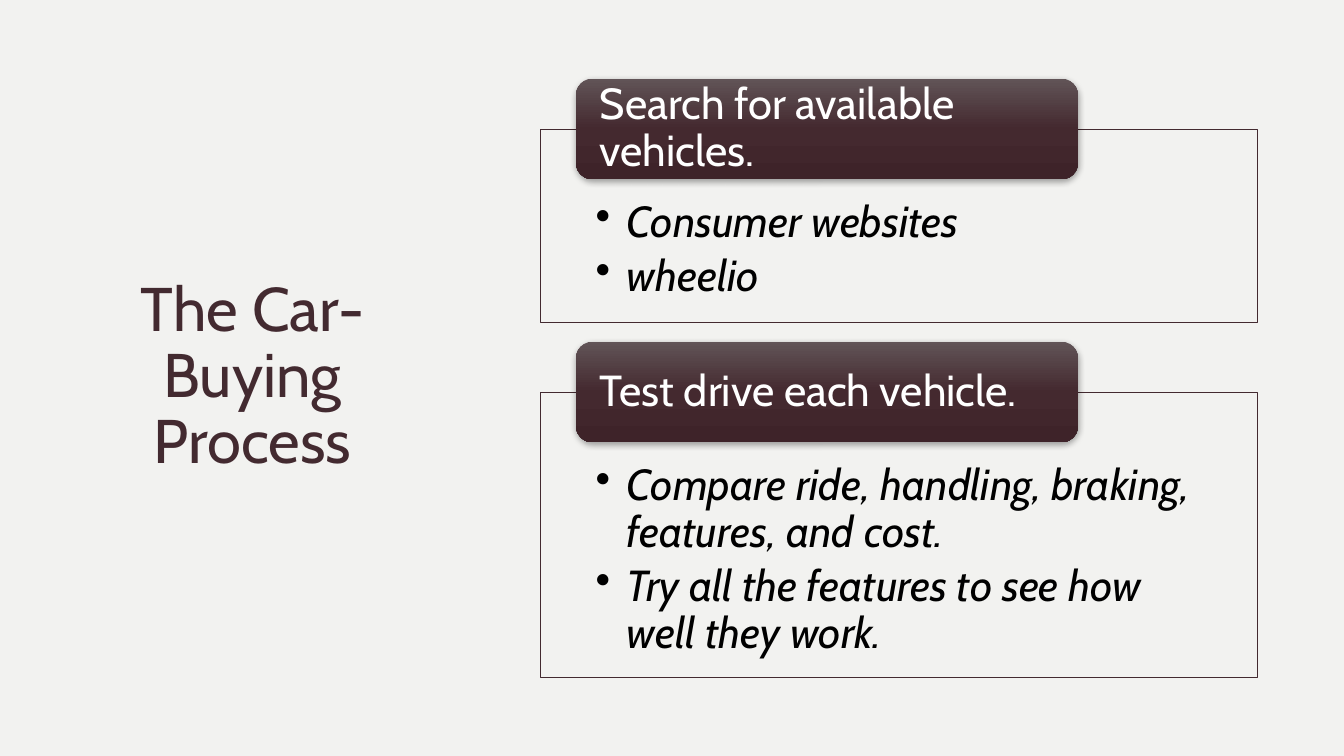
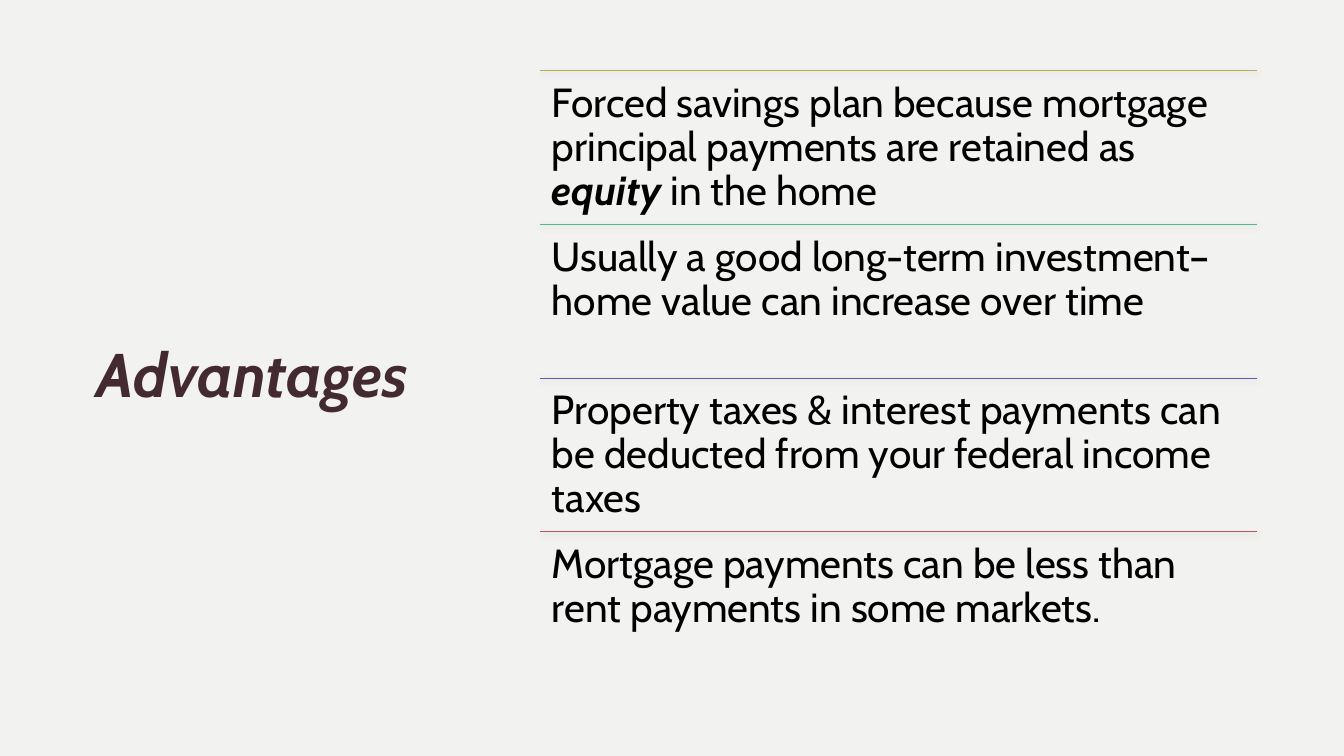
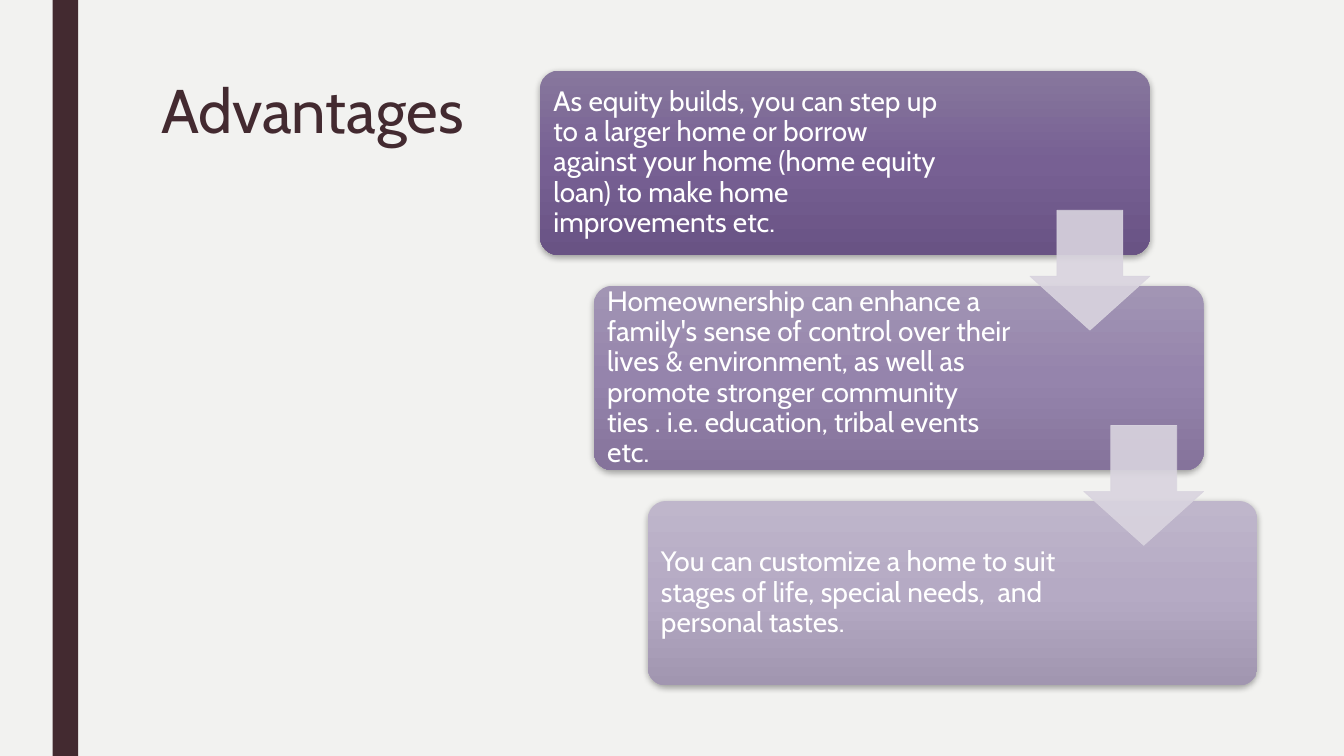
from dataclasses import dataclass

from lxml import etree
from pptx import Presentation
from pptx.dml.color import RGBColor
from pptx.enum import shapes, text
from pptx.oxml.ns import qn
from pptx.util import Cm, Pt


@dataclass(frozen=True)
class Theme:
    font: str = "Cabin"
    paper: str = "F2F2F0"
    plum: str = "432A30"
    black: str = "000000"
    white: str = "FFFFFF"
    arrow: str = "D9D4DF"
    header_gradient: tuple = ("615457", "44292F", "3E2329")
    card_gradients: tuple = (
        ("87779D", "776093", "695384"),
        ("A295B4", "9584AC", "85739B"),
        ("BFB6CB", "B5AAC4", "A196B0"),
    )
    rules: tuple = ("BDAB56", "56B98A", "6B56B4", "B0565D")
    title_size: int = 44
    process_size: int = 31
    row_size: int = 29
    card_size: int = 20


theme = Theme()
LEFT, ANCHOR = text.PP_ALIGN.LEFT, text.MSO_ANCHOR


def format_text(shape, size, colour, margins, anchor, align=LEFT, spacing=0.9):
    """Format text already set on a shape; margins run left, top, right, bottom in cm."""
    frame = shape.text_frame
    frame.word_wrap = True
    frame.vertical_anchor = anchor
    frame.margin_left, frame.margin_top, frame.margin_right, frame.margin_bottom = map(Cm, margins)
    for paragraph in frame.paragraphs:
        paragraph.alignment = align
        paragraph.line_spacing = spacing
        for run in paragraph.runs:
            run.font.name = theme.font
            run.font.size = Pt(size)
            run.font.color.rgb = RGBColor.from_string(colour)


def add_title(slide, title, left, top, width, height, anchor, align):
    box = slide.shapes.add_textbox(Cm(left), Cm(top), Cm(width), Cm(height))
    box.text_frame.text = title
    format_text(box, theme.title_size, theme.plum, (0.25, 0.13, 0.25, 0.13), anchor, align, 0.89)
    return box


presentation = Presentation()
presentation.slide_width, presentation.slide_height = Cm(33.87), Cm(19.05)
background = presentation.slide_master.background.fill
background.solid()
background.fore_color.rgb = RGBColor.from_string(theme.paper)
process_slide, benefits_slide, steps_slide = [
    presentation.slides.add_slide(presentation.slide_layouts[6]) for _ in range(3)
]

content_left, content_top, content_width, content_height = 13.61, 1.78, 18.08, 15.49
side_title = (1.78, 1.78, 9.17, 15.49, ANCHOR.MIDDLE, text.PP_ALIGN.CENTER)
gradient_shapes = []
shadowed_shapes = []

# Slide 1: panels with overlapping headers
add_title(process_slide, "The Car-Buying Process", *side_title)
panels = [
    ("Search for available vehicles.", ["Consumer websites", "wheelio"], 4.88),
    ("Test drive each vehicle.",
     ["Compare ride, handling, braking, features, and cost.",
      "Try all the features to see how well they work."], 7.19),
]
header_height, panel_gap, bullet_indent = 2.54, 1.75, 0.79
panel_top = 3.25
for heading, bullets, panel_height in panels:
    panel = process_slide.shapes.add_shape(
        shapes.MSO_SHAPE.RECTANGLE,
        Cm(content_left), Cm(panel_top), Cm(content_width), Cm(panel_height))
    panel.shadow.inherit = False
    panel.fill.solid()
    panel.fill.fore_color.rgb = RGBColor.from_string(theme.paper)
    panel.line.color.rgb = RGBColor.from_string(theme.plum)
    panel.line.width = Pt(0.5)
    panel.text_frame.text = "\n".join(bullets)
    format_text(panel, theme.process_size, theme.black, (1.4, 1.8, 1.4, 0.6), ANCHOR.TOP)
    for paragraph in panel.text_frame.paragraphs:
        paragraph.space_after = Pt(5)
        paragraph.font.italic = True
        for run in paragraph.runs:
            run.font.italic = True
        properties = paragraph._p.get_or_add_pPr()
        properties.set("marL", str(Cm(bullet_indent)))
        properties.set("indent", str(-Cm(bullet_indent)))
        bullet = etree.Element(qn("a:buChar"), char="•")
        properties.find(qn("a:spcAft")).addnext(bullet)

    header = process_slide.shapes.add_shape(
        shapes.MSO_SHAPE.ROUNDED_RECTANGLE,
        Cm(content_left + content_width * 0.05), Cm(panel_top - header_height / 2),
        Cm(content_width * 0.7), Cm(header_height))
    header.text_frame.text = heading
    format_text(header, theme.process_size, theme.white, (0.48, 0, 0.48, 0), ANCHOR.MIDDLE)
    gradient_shapes.append((header, theme.header_gradient))
    panel_top += panel_height + panel_gap

# Slide 2: ruled rows
title_box = add_title(benefits_slide, "Advantages", *side_title)
title_font = title_box.text_frame.paragraphs[0].runs[0].font
title_font.bold = title_font.italic = True
rows = [
    ("Forced savings plan because mortgage principal payments are retained as ",
     "equity", " in the home"),
    ("Usually a good long-term investment– home value can increase over time",),
    ("Property taxes & interest payments can be deducted from your federal income taxes",),
    ("Mortgage payments can be less than rent payments in some markets.",),
]
row_height = content_height / len(rows)
for index, (row, colour) in enumerate(zip(rows, theme.rules)):
    row_top = content_top + index * row_height
    rule = benefits_slide.shapes.add_connector(
        shapes.MSO_CONNECTOR.STRAIGHT,
        Cm(content_left), Cm(row_top), Cm(content_left + content_width), Cm(row_top))
    rule.line.color.rgb = RGBColor.from_string(colour)
    rule.line.width = Pt(0.5)
    shadowed_shapes.append(rule)
    box = benefits_slide.shapes.add_textbox(
        Cm(content_left), Cm(row_top), Cm(content_width), Cm(row_height))
    paragraph = box.text_frame.paragraphs[0]
    for part in row:
        run = paragraph.add_run()
        run.text = part
        run.font.bold = run.font.italic = part == "equity"
    format_text(box, theme.row_size, theme.black, (0.3, 0.3, 0.3, 0.3), ANCHOR.TOP)

# Slide 3: staggered cards joined by arrows
band = steps_slide.shapes.add_shape(
    shapes.MSO_SHAPE.RECTANGLE, Cm(1.33), 0, Cm(0.64), presentation.slide_height)
band.shadow.inherit = False
band.fill.solid()
band.fill.fore_color.rgb = RGBColor.from_string(theme.plum)
band.line.fill.background()
cards = [
    ("As equity builds, you can step up to a larger home or borrow against your home "
     "(home equity loan) to make home improvements etc.", 4.95),
    ("Homeownership can enhance a family's sense of control over their lives & environment, "
     "as well as promote stronger community ties . i.e. education, tribal events etc.", 4.57),
    ("You can customize a home to suit stages of life, special needs,  and personal tastes.",
     4.57),
]
card_width, card_height = content_width * 0.85, content_height * 0.3
step_x = (content_width - card_width) / (len(cards) - 1)
step_y = (content_height - card_height) / (len(cards) - 1)
for index, ((statement, right_margin), gradient) in enumerate(zip(cards, theme.card_gradients)):
    card = steps_slide.shapes.add_shape(
        shapes.MSO_SHAPE.ROUNDED_RECTANGLE,
        Cm(content_left + index * step_x), Cm(content_top + index * step_y),
        Cm(card_width), Cm(card_height))
    card.adjustments[0] = 0.1
    card.text_frame.text = statement
    format_text(card, theme.card_size, theme.white, (0.2, 0.2, right_margin, 0.2), ANCHOR.MIDDLE)
    gradient_shapes.append((card, gradient))

arrow_size = 3.02
for index in range(len(cards) - 1):
    arrow = steps_slide.shapes.add_shape(
        shapes.MSO_SHAPE.DOWN_ARROW,
        Cm(content_left + index * step_x + card_width - arrow_size),
        Cm(content_top + index * step_y + 3.52), Cm(arrow_size), Cm(arrow_size))
    arrow.shadow.inherit = False
    arrow.adjustments[0], arrow.adjustments[1] = 0.55, 0.45
    arrow.fill.solid()
    arrow.fill.fore_color.rgb = RGBColor.from_string(theme.arrow)
    arrow.line.color.rgb = RGBColor.from_string(theme.arrow)
    arrow.line.width = Pt(0.5)
    for colour in arrow._element.spPr.iter(qn("a:srgbClr")):
        etree.SubElement(colour, qn("a:alpha"), val="90000")
add_title(steps_slide, "Advantages", 3.81, 1.9, 26.67, 4.11, ANCHOR.TOP, LEFT)

# Gradients and soft shadows
for shape, colours in gradient_shapes:
    shape.line.fill.background()
    shape.fill.gradient()
    shape.fill.gradient_angle = 270
    stops = shape._element.spPr.find(qn("a:gradFill")).find(qn("a:gsLst"))
    for stop in list(stops):
        stops.remove(stop)
    for position, colour in zip((0, 50000, 100000), colours):
        stop = etree.SubElement(stops, qn("a:gs"), pos=str(position))
        etree.SubElement(stop, qn("a:srgbClr"), val=colour)
    shadowed_shapes.append(shape)

for shape in shadowed_shapes:
    effects = etree.SubElement(shape._element.spPr, qn("a:effectLst"))
    shadow = etree.SubElement(
        effects, qn("a:outerShdw"), blurRad=str(Pt(4.5)), dist=str(Pt(1.5)),
        dir="5400000", rotWithShape="0")
    shadow_colour = etree.SubElement(shadow, qn("a:srgbClr"), val=theme.black)
    etree.SubElement(shadow_colour, qn("a:alpha"), val="35000")

presentation.save("out.pptx")
